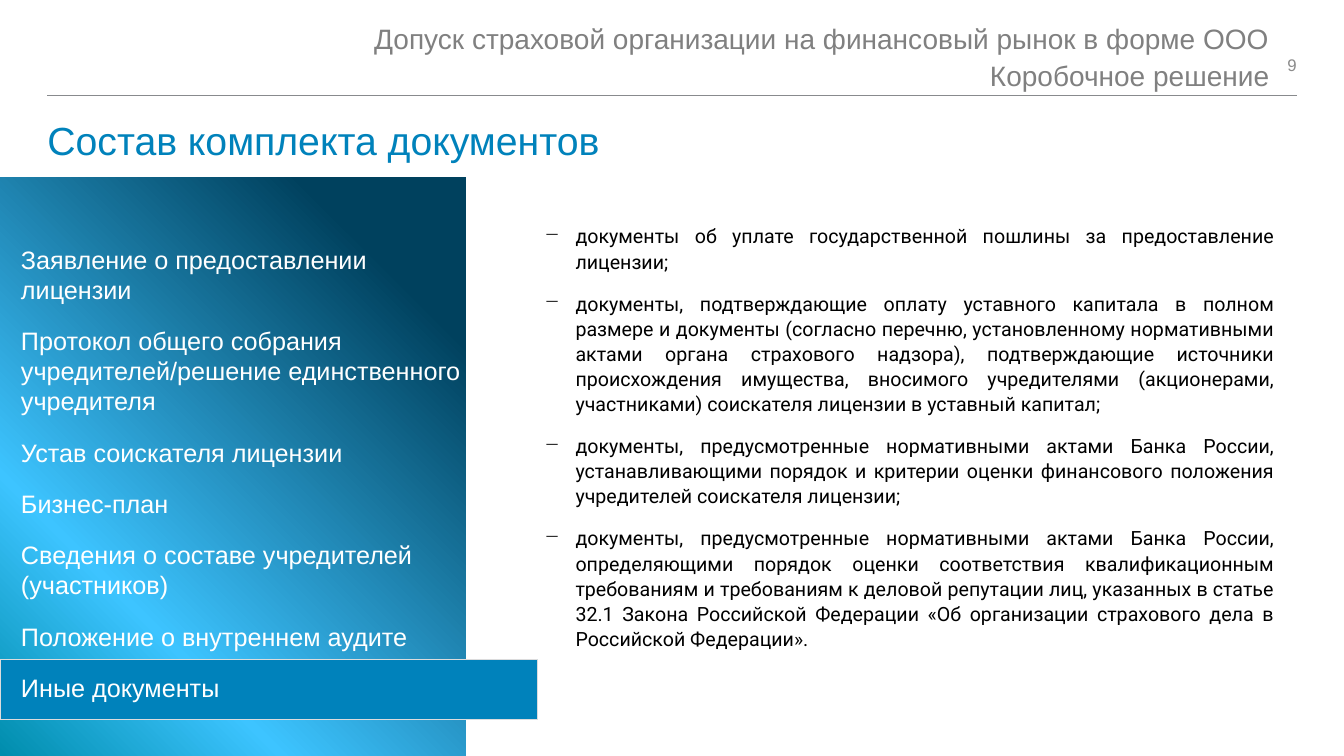
"""Build the slide listing the contents of the licence document package."""
from copy import deepcopy

from pptx import Presentation
from pptx.dml.color import RGBColor
from pptx.enum import shapes, text
from pptx.oxml import ns, xmlchemy
from pptx.util import Inches, Pt

BLUE = RGBColor(0x00, 0x82, 0xBB)
NAVY = RGBColor(0x00, 0x41, 0x5E)
SKY = RGBColor(0x3D, 0xC4, 0xFF)
TEAL = RGBColor(0x00, 0x8D, 0xAD)
WHITE = RGBColor(0xFF, 0xFF, 0xFF)
BLACK = RGBColor(0x00, 0x00, 0x00)
GREY = RGBColor(0x80, 0x80, 0x80)
NUMBER_GREY = RGBColor(0x8C, 0x8C, 0x8C)
RULE_GREY = RGBColor(0x88, 0x8A, 0x8D)
BORDER_GREY = RGBColor(0xDC, 0xDC, 0xDD)

HEADER = ["Допуск страховой организации на финансовый рынок в форме ООО", "Коробочное решение"]
SECTIONS = [
    "Заявление о предоставлении лицензии",
    "Протокол общего собрания учредителей/решение единственного учредителя",
    "Устав соискателя лицензии",
    "Бизнес-план",
    "Сведения о составе учредителей (участников)",
    "Положение о внутреннем аудите",
    "Иные документы",
]
DOCUMENTS = [
    "документы об уплате государственной пошлины за предоставление лицензии;",
    "документы, подтверждающие оплату уставного капитала в полном размере и документы "
    "(согласно перечню, установленному нормативными актами органа страхового надзора), "
    "подтверждающие источники происхождения имущества, вносимого учредителями "
    "(акционерами, участниками) соискателя лицензии в уставный капитал;",
    "документы, предусмотренные нормативными актами Банка России, устанавливающими "
    "порядок и критерии оценки финансового положения учредителей соискателя лицензии;",
    "документы, предусмотренные нормативными актами Банка России, определяющими порядок "
    "оценки соответствия квалификационным требованиям и требованиям к деловой репутации "
    "лиц, указанных в статье 32.1 Закона Российской Федерации «Об организации страхового "
    "дела в Российской Федерации».",
]


def fill_text(box, lines, size, color, font="Arial", align=text.PP_ALIGN.LEFT,
              spacing=1.0, before=0, after=0, bullet=None):
    frame = box.text_frame
    frame.word_wrap = True
    for index, line in enumerate(lines):
        para = frame.add_paragraph() if index else frame.paragraphs[0]
        para.alignment = align
        para.line_spacing = spacing
        para.space_before = Pt(before if index else 0)
        para.space_after = Pt(after)
        if bullet:
            properties = para._p.get_or_add_pPr()
            properties.set("marL", str(Inches(0.81)))
            properties.set("indent", str(Inches(-0.31)))
            mark = xmlchemy.OxmlElement("a:buChar")
            mark.set("char", bullet)
            properties.append(mark)
        span = para.add_run()
        span.text = line
        span.font.name = font
        span.font.size = Pt(size)
        span.font.color.rgb = color


def clear_margins(box, anchor=text.MSO_ANCHOR.TOP):
    frame = box.text_frame
    frame.margin_left = frame.margin_right = frame.margin_top = frame.margin_bottom = 0
    frame.vertical_anchor = anchor


deck = Presentation()
deck.slide_width = Inches(13.33)
deck.slide_height = Inches(7.5)
page = deck.slides.add_slide(deck.slide_layouts[5])

rule = page.shapes.add_connector(
    shapes.MSO_CONNECTOR.STRAIGHT, Inches(0.47), Inches(0.95), Inches(12.86), Inches(0.95))
rule.line.color.rgb = RULE_GREY
rule.line.width = Pt(0.5)
rule._element.spPr.append(xmlchemy.OxmlElement("a:effectLst"))

title = page.shapes.title
title.left, title.top = Inches(0.47), Inches(1.21)
title.width, title.height = Inches(12.39), Inches(0.66)
clear_margins(title)
title.text_frame.auto_size = text.MSO_AUTO_SIZE.NONE
fill_text(title, ["Состав комплекта документов"], 28, BLUE, spacing=0.9)

number = page.shapes.add_textbox(Inches(12.05), Inches(0.47), Inches(0.81), Inches(0.35))
clear_margins(number, text.MSO_ANCHOR.MIDDLE)
fill_text(number, ["9"], 12, NUMBER_GREY, align=text.PP_ALIGN.RIGHT)

panel = page.shapes.add_shape(
    shapes.MSO_SHAPE.RECTANGLE, Inches(-0.56), Inches(2.32), Inches(5.74), Inches(4.62))
panel.rotation = 90
panel.shadow.inherit = False
panel.line.fill.background()
panel.fill.gradient()
panel.fill.gradient_angle = 315
stop_list = panel._element.spPr.find(".//" + ns.qn("a:gsLst"))
stop_list.append(deepcopy(stop_list[0]))
for stop, (position, color) in zip(
        panel.fill.gradient_stops, [(0.16, NAVY), (0.73, SKY), (1, TEAL)]):
    stop.position = position
    stop.color.rgb = color

header = page.shapes.add_textbox(Inches(-0.86), Inches(0.18), Inches(13.45), Inches(0.66))
clear_margins(header)
fill_text(header, HEADER, 20, GREY, align=text.PP_ALIGN.RIGHT, spacing=1.1)

highlight = page.shapes.add_shape(
    shapes.MSO_SHAPE.RECTANGLE, 0, Inches(6.54), Inches(5.33), Inches(0.6))
highlight.shadow.inherit = False
highlight.fill.solid()
highlight.fill.fore_color.rgb = BLUE
highlight.line.color.rgb = BORDER_GREY
highlight.line.width = Pt(1)

sections = page.shapes.add_textbox(Inches(0.11), Inches(2.37), Inches(4.61), Inches(4.7))
sections.text_frame.auto_size = text.MSO_AUTO_SIZE.SHAPE_TO_FIT_TEXT
fill_text(sections, SECTIONS, 18, WHITE, after=15)

documents = page.shapes.add_textbox(Inches(4.8), Inches(2.16), Inches(7.94), Inches(4.37))
documents.text_frame.auto_size = text.MSO_AUTO_SIZE.SHAPE_TO_FIT_TEXT
fill_text(documents, DOCUMENTS, 14, BLACK, font="Roboto", align=text.PP_ALIGN.JUSTIFY,
          spacing=1.07, before=6, after=6, bullet="─")

deck.save("out.pptx")
